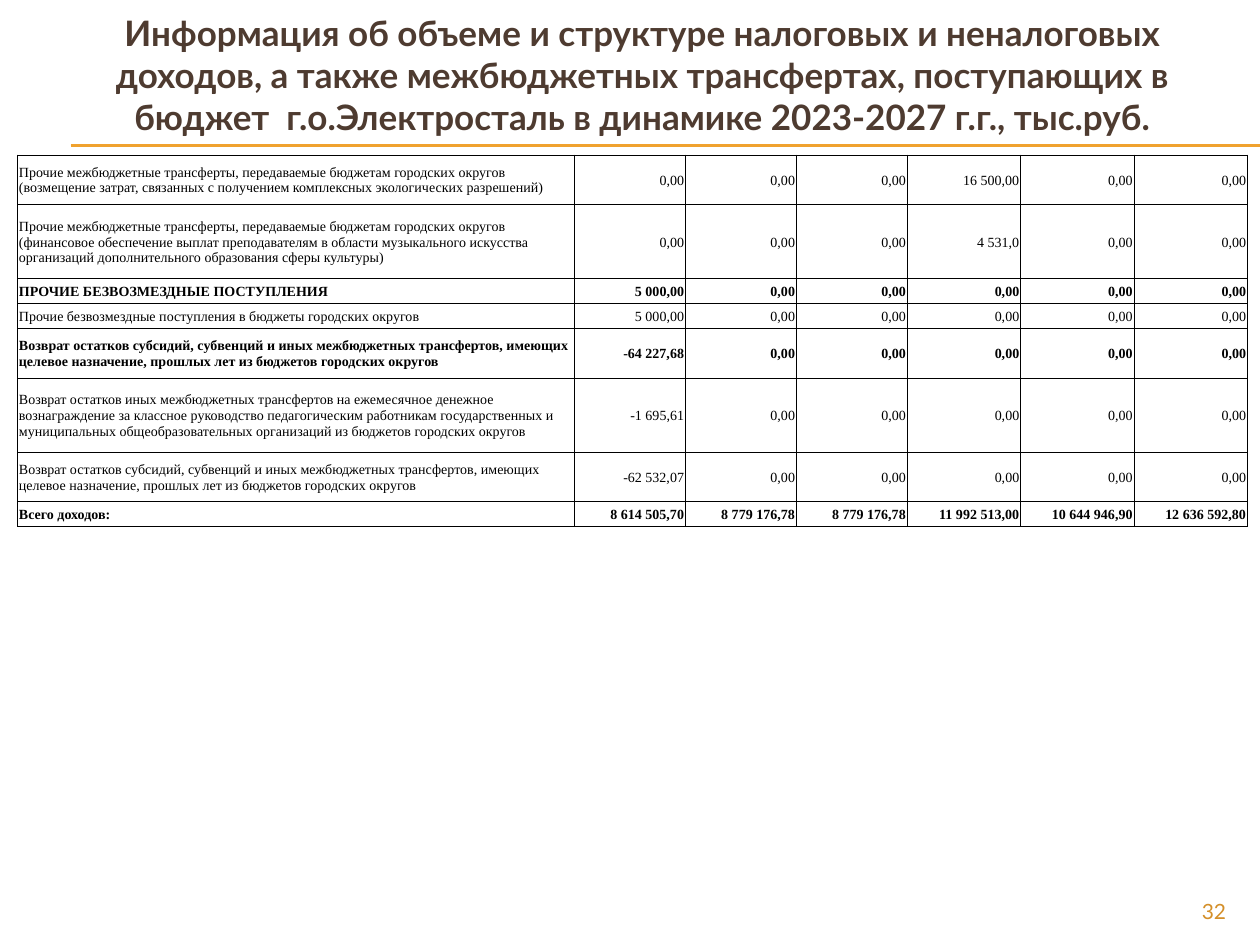
from lxml.etree import SubElement
from pptx import Presentation
from pptx.dml.color import RGBColor
from pptx.enum.shapes import MSO_CONNECTOR as CONN
from pptx.enum.text import MSO_ANCHOR as ANCHOR, PP_ALIGN as ALIGN
from pptx.oxml.ns import qn
from pptx.util import Inches, Pt

W, H = 10, 7.5
COLORS = {"title": "4E3B30", "rule": "F0A22E", "page": "D48F29", "ink": "000000"}
TITLE = ("Информация об объеме и структуре налоговых и неналоговых доходов, "
         "а также межбюджетных трансфертах, поступающих в бюджет  г.о.Электросталь "
         "в динамике 2023-2027 г.г., тыс.руб.")
COLS = [4.42] + [0.88] * 3 + [0.9] * 3
LINE_H = 2.95 / 15
ZERO = "0,00"
OTHER = "Прочие межбюджетные трансферты, передаваемые бюджетам городских округов "
RETURNS = ("Возврат остатков субсидий, субвенций и иных межбюджетных трансфертов, "
           "имеющих целевое назначение, прошлых лет из бюджетов городских округов")
ROWS = [
    (2, False, OTHER + "(возмещение затрат, связанных с получением комплексных "
     "экологических разрешений)", [ZERO] * 3 + ["16 500,00"] + [ZERO] * 2),
    (3, False, OTHER + "(финансовое обеспечение выплат преподавателям в области "
     "музыкального искусства организаций дополнительного образования сферы культуры)",
     [ZERO] * 3 + ["4 531,0"] + [ZERO] * 2),
    (1, True, "ПРОЧИЕ БЕЗВОЗМЕЗДНЫЕ ПОСТУПЛЕНИЯ", ["5 000,00"] + [ZERO] * 5),
    (1, False, "Прочие безвозмездные поступления в бюджеты городских округов",
     ["5 000,00"] + [ZERO] * 5),
    (2, True, RETURNS, ["-64 227,68"] + [ZERO] * 5),
    (3, False, "Возврат остатков иных межбюджетных трансфертов на ежемесячное денежное "
     "вознаграждение за классное руководство педагогическим работникам государственных "
     "и муниципальных общеобразовательных организаций из бюджетов городских округов",
     ["-1 695,61"] + [ZERO] * 5),
    (2, False, RETURNS, ["-62 532,07"] + [ZERO] * 5),
    (1, True, "Всего доходов:", ["8 614 505,70", "8 779 176,78", "8 779 176,78",
                                 "11 992 513,00", "10 644 946,90", "12 636 592,80"]),
]


def write(tf, text, font, size, color, align, bold=False):
    """Fill a text frame with one uniformly styled paragraph."""
    p = tf.paragraphs[0]
    p.text, p.alignment = text, align
    p.font.name, p.font.size, p.font.bold = font, Pt(size), bold
    p.font.color.rgb = RGBColor.from_string(COLORS[color])


def add_text(s, box, text, size, color, align, anchor, bold=False):
    """Add a wrapped Lato text box."""
    tf = s.shapes.add_textbox(*map(Inches, box)).text_frame
    tf.word_wrap, tf.vertical_anchor = True, anchor
    write(tf, text, "Lato", size, color, align, bold)


def add_rule(s, y):
    """Draw a thin line from the left indent to the slide's right edge."""
    line = s.shapes.add_connector(CONN.STRAIGHT, Inches(0.56), Inches(y), Inches(W), Inches(y))
    line.line.color.rgb = RGBColor.from_string(COLORS["rule"])
    line.line.width = Pt(0.75)
    SubElement(line._element.spPr, qn("a:effectLst"))


def add_borders(cell):
    """Frame a cell with thin lines on all four sides."""
    tc_pr = cell._tc.get_or_add_tcPr()
    for side in "LRTB":
        ln = SubElement(tc_pr, qn(f"a:ln{side}"), w=str(Pt(0.5)))
        SubElement(SubElement(ln, qn("a:solidFill")), qn("a:srgbClr"), val=COLORS["ink"])


def fill_cell(cell, text, align, bold):
    """Style one table cell and set its text."""
    cell.margin_left = cell.margin_right = cell.margin_top = Inches(0.01)
    cell.margin_bottom = 0
    cell.vertical_anchor = ANCHOR.MIDDLE
    add_borders(cell)
    cell.fill.background()
    write(cell.text_frame, text, "Times New Roman", 8, "ink", align, bold)


def add_income_table(s):
    """Add the income table, with row heights set by their line counts."""
    height = LINE_H * sum(row[0] for row in ROWS)
    table = s.shapes.add_table(len(ROWS), len(COLS), Inches(0.14), Inches(1.23),
                               Inches(sum(COLS)), Inches(height)).table
    table.first_row = table.horz_banding = False
    for col, width in zip(table.columns, COLS):
        col.width = Inches(width)
    for row, (lines, bold, name, values) in zip(table.rows, ROWS):
        row.height = Inches(lines * LINE_H)
        for i, (cell, text) in enumerate(zip(row.cells, [name] + values)):
            fill_cell(cell, text, ALIGN.RIGHT if i else ALIGN.LEFT, bold)


def main():
    """Build and save the slide."""
    prs = Presentation()
    prs.slide_width, prs.slide_height = Inches(W), Inches(H)
    s = prs.slides.add_slide(prs.slide_layouts[6])
    for y in (1.15, 1.16):
        add_rule(s, y)
    add_text(s, (0.35, 0.13, 9.5, 0.92), TITLE, 20, "title", ALIGN.CENTER, ANCHOR.MIDDLE, True)
    add_text(s, (9, 7.08, 0.83, 0.27), "32", 12, "page", ALIGN.RIGHT, ANCHOR.TOP)
    add_income_table(s)
    prs.save("out.pptx")


if __name__ == "__main__":
    main()
